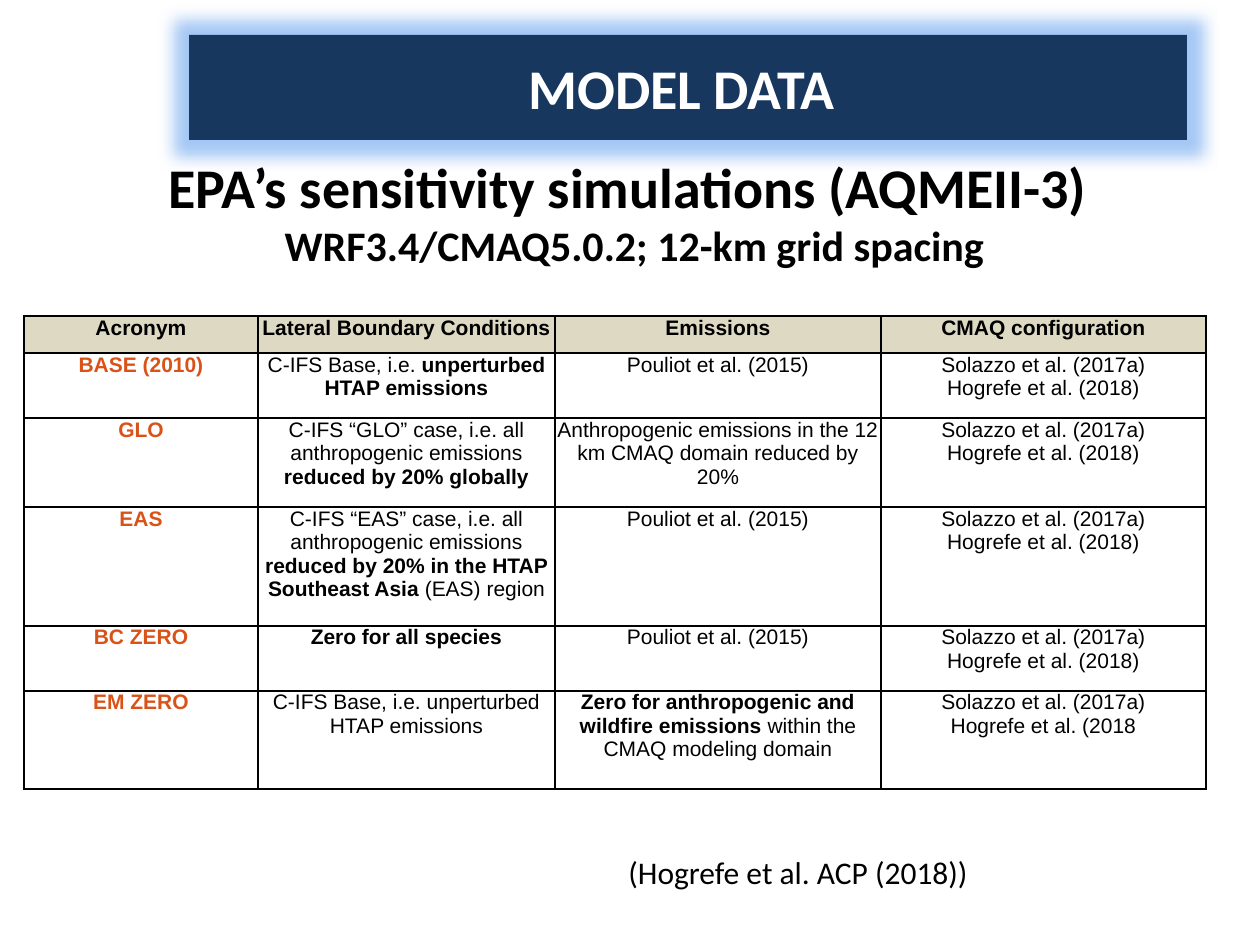
"""Build the slide that lists the model sensitivity simulations."""
from lxml import etree
from pptx import Presentation
from pptx.dml.color import RGBColor
from pptx.enum.text import MSO_ANCHOR, MSO_AUTO_SIZE, PP_ALIGN
from pptx.oxml.ns import qn
from pptx.util import Emu, Pt

CENTER, LEFT = PP_ALIGN.CENTER, PP_ALIGN.LEFT
TOP, MIDDLE = MSO_ANCHOR.TOP, MSO_ANCHOR.MIDDLE
GROW = MSO_AUTO_SIZE.SHAPE_TO_FIT_TEXT

EMU_PER_PX = 914400 / 126
NAVY = RGBColor(0x17, 0x37, 0x5E)
GLOW = RGBColor(0x1E, 0x75, 0xE6)
BEIGE = RGBColor(0xDD, 0xD9, 0xC3)
ORANGE = RGBColor(0xD9, 0x53, 0x19)
BLACK = RGBColor(0, 0, 0)
WHITE = RGBColor(0xFF, 0xFF, 0xFF)

TITLE_FONT = {"name": "Calibri", "size": Pt(32), "bold": True}
SUBTITLE_FONT = TITLE_FONT | {"size": Pt(24)}
CITATION_FONT = {"name": "Calibri", "size": Pt(18), "bold": False}
CELL_FONT = {"name": "Arial", "size": Pt(12), "bold": False}

COLUMN_WIDTHS = [234, 297, 326, 325]
ROW_HEIGHTS = [37, 65, 89, 119, 65, 98]
POULIOT = "Pouliot et al. (2015)"
CONFIGURATION = "Solazzo et al. (2017a)\nHogrefe et al. (2018)"
HEADER = ["Acronym", "Lateral Boundary Conditions", "Emissions", "CMAQ configuration"]
SIMULATIONS = [
    ["BASE (2010)", "C-IFS Base, i.e. **unperturbed HTAP emissions**", POULIOT, CONFIGURATION],
    ["GLO", "C-IFS “GLO” case, i.e. all anthropogenic emissions **reduced by 20% globally**",
     "Anthropogenic emissions in the 12 km CMAQ domain reduced by 20%", CONFIGURATION],
    ["EAS", "C-IFS “EAS” case, i.e. all anthropogenic emissions "
     "**reduced by 20% in the HTAP Southeast Asia** (EAS) region", POULIOT, CONFIGURATION],
    ["BC ZERO", "**Zero for all species**", POULIOT, CONFIGURATION],
    ["EM ZERO", "C-IFS Base, i.e. unperturbed HTAP emissions",
     "**Zero for anthropogenic and wildfire emissions **within the CMAQ modeling domain",
     CONFIGURATION.removesuffix(")")],
]


def px(length):
    """Turn a length in px into EMU."""
    return Emu(round(length * EMU_PER_PX))


def set_values(target, values):
    """Set attributes from a dict."""
    for name, value in values.items():
        setattr(target, name, value)


def place(shape, left, top, width, height):
    """Position a shape in px."""
    set_values(shape, {"left": px(left), "top": px(top),
                       "width": px(width), "height": px(height)})


def write_paragraph(paragraph, text, font, color, alignment=CENTER):
    """Write text whose parts between double asterisks are bold."""
    paragraph.alignment = alignment
    for index, part in enumerate(text.split("**")):
        if part:
            run = paragraph.add_run()
            run.text = part
            set_values(run.font, font)
            run.font.bold = font["bold"] or index % 2 == 1
            run.font.color.rgb = color


def add_color(parent, color):
    """Add a solid fill to an XML element."""
    fill = etree.SubElement(parent, qn("a:solidFill"))
    etree.SubElement(fill, qn("a:srgbClr"), val=str(color))


def add_glow(shape, color, radius, alpha):
    """Surround a shape with a translucent glow."""
    effects = etree.SubElement(shape._element.spPr, qn("a:effectLst"))
    glow = etree.SubElement(effects, qn("a:glow"), rad=str(radius))
    glow_color = etree.SubElement(glow, qn("a:srgbClr"), val=str(color))
    etree.SubElement(glow_color, qn("a:alpha"), val=str(alpha))


def format_title(title):
    """Turn the title placeholder into the glowing banner."""
    place(title, 189, 47, 998, 81)
    title.fill.solid()
    title.fill.fore_color.rgb = NAVY
    title.line.fill.background()
    add_glow(title, GLOW, Pt(18), 40000)
    set_values(title.text_frame, {"word_wrap": True, "auto_size": GROW, "vertical_anchor": MIDDLE})
    write_paragraph(title.text_frame.paragraphs[0], "MODEL DATA ", TITLE_FONT, WHITE)


def add_text(slide, box, lines, alignment, wrap):
    """Add a text box with one paragraph per text and font pair."""
    shape = slide.shapes.add_textbox(*map(px, box))
    frame = shape.text_frame
    set_values(frame, {"word_wrap": wrap, "auto_size": GROW})
    for index, (text, font) in enumerate(lines):
        paragraph = frame.add_paragraph() if index else frame.paragraphs[0]
        write_paragraph(paragraph, text, font, BLACK, alignment)


def format_cell(cell, text, font, color, fill=None):
    """Fill one bordered table cell."""
    set_values(cell, {"margin_left": px(2), "margin_right": px(2), "margin_top": 0,
                      "margin_bottom": 0, "vertical_anchor": TOP})
    properties = cell._tc.get_or_add_tcPr()
    for side in "LRTB":
        border = etree.SubElement(properties, qn(f"a:ln{side}"), w=str(Pt(1)))
        add_color(border, BLACK)
    if fill is None:
        cell.fill.background()
    else:
        cell.fill.solid()
        cell.fill.fore_color.rgb = fill
    for index, line in enumerate(text.split("\n")):
        frame = cell.text_frame
        paragraph = frame.add_paragraph() if index else frame.paragraphs[0]
        write_paragraph(paragraph, line, font, color)


def add_simulation_table(slide):
    """Add the table of simulations."""
    rows = [HEADER, *SIMULATIONS]
    box = (24, 316, sum(COLUMN_WIDTHS), sum(ROW_HEIGHTS))
    table = slide.shapes.add_table(len(rows), len(HEADER), *map(px, box)).table
    set_values(table, {"first_row": False, "horz_banding": False})
    for column, width in zip(table.columns, COLUMN_WIDTHS):
        column.width = px(width)
    for row, height in zip(table.rows, ROW_HEIGHTS):
        row.height = px(height)
    for row_index, texts in enumerate(rows):
        is_header = row_index == 0
        for column_index, text in enumerate(texts):
            is_acronym = column_index == 0 and not is_header
            font = CELL_FONT | {"bold": is_header or is_acronym}
            format_cell(table.cell(row_index, column_index), text, font,
                        ORANGE if is_acronym else BLACK, BEIGE if is_header else None)


def main():
    """Build and save the slide."""
    presentation = Presentation()
    set_values(presentation, {"slide_width": px(1260), "slide_height": px(945)})
    slide = presentation.slides.add_slide(presentation.slide_layouts.get_by_name("Title Only"))
    format_title(slide.shapes.title)
    add_simulation_table(slide)
    add_text(slide, (24, 146, 1221, 131),
             [("EPA’s sensitivity simulations (AQMEII-3) ", TITLE_FONT),
              ("WRF3.4/CMAQ5.0.2; 12-km grid spacing", SUBTITLE_FONT)], CENTER, True)
    add_text(slide, (616, 847, 369, 50),
             [("(Hogrefe et al. ACP (2018))", CITATION_FONT)], LEFT, False)
    presentation.save("out.pptx")


if __name__ == "__main__":
    main()
